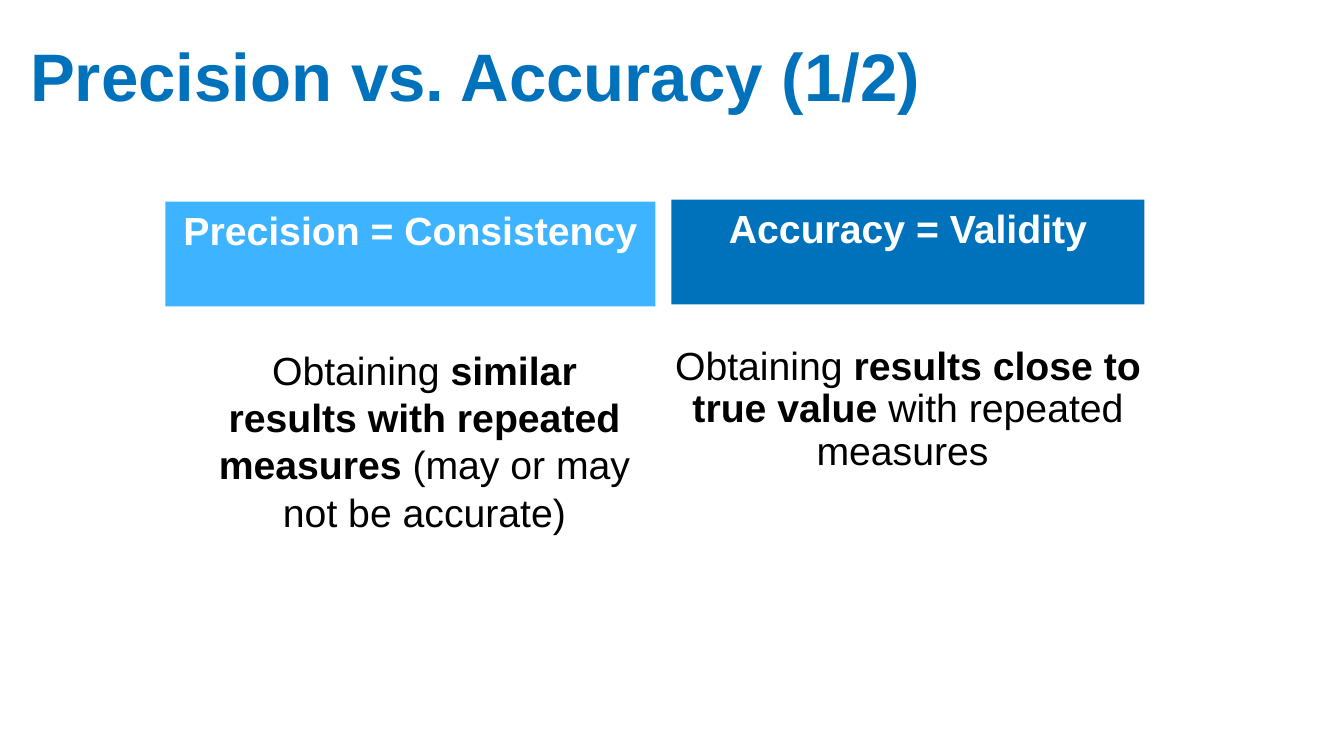
from pptx import Presentation
from pptx.dml.color import RGBColor
from pptx.enum.shapes import MSO_SHAPE
from pptx.enum.text import MSO_ANCHOR, PP_ALIGN
from pptx.util import Inches, Pt

COLOURS = {
    "blue": "0072BC",
    "sky": "3EB3FF",
    "white": "FFFFFF",
    "black": "000000",
}


def colour(name):
    """Return the named colour."""
    return RGBColor.from_string(COLOURS[name])


def write_spans(para, spans, size, colour_name):
    """Add (text, bold) spans to a paragraph."""
    for text, bold in spans:
        span = para.add_run()
        span.text = text
        span.font.name = "Arial"
        span.font.size = Pt(size)
        span.font.bold = bold
        span.font.color.rgb = colour(colour_name)


def set_frame(frame, margins, anchor=MSO_ANCHOR.TOP):
    """Set wrapping, anchor and left, top, right, bottom margins."""
    frame.word_wrap = True
    frame.vertical_anchor = anchor
    frame.margin_left, frame.margin_top, frame.margin_right, frame.margin_bottom = map(Inches, margins)


def add_title(page, text):
    """Add the slide title."""
    box = page.shapes.add_textbox(Inches(0.3), Inches(0.3), Inches(12.77), Inches(0.85))
    set_frame(box.text_frame, (0, 0, 0, 0), MSO_ANCHOR.BOTTOM)
    para = box.text_frame.paragraphs[0]
    para.line_spacing = 0.9
    write_spans(para, [(text, True)], 48, "blue")


def add_header(page, left, top, width, text, fill):
    """Add a filled column header."""
    box = page.shapes.add_shape(MSO_SHAPE.RECTANGLE, Inches(left), Inches(top), Inches(width), Inches(1.04))
    box.shadow.inherit = False
    box.fill.solid()
    box.fill.fore_color.rgb = colour(fill)
    box.line.fill.background()
    set_frame(box.text_frame, (0.1, 0.05, 0.1, 0.05))
    para = box.text_frame.paragraphs[0]
    para.alignment = PP_ALIGN.CENTER
    write_spans(para, [(text, True)], 28, "white")


def add_definition(page, left, width, spans, margins, line_spacing):
    """Add the centred definition under a header."""
    box = page.shapes.add_textbox(Inches(left), Inches(3.39), Inches(width), Inches(3.43))
    set_frame(box.text_frame, margins)
    para = box.text_frame.paragraphs[0]
    para.alignment = PP_ALIGN.CENTER
    para.line_spacing = line_spacing
    write_spans(para, spans, 28, "black")


def main():
    """Build and save the slide."""
    deck = Presentation()
    deck.slide_width, deck.slide_height = Inches(13.33), Inches(7.5)
    page = deck.slides.add_slide(deck.slide_layouts[6])
    add_title(page, "Precision vs. Accuracy (1/2)")
    precision = [
        ("Obtaining ", False),
        ("similar results with repeated measures ", True),
        ("(may or may not be accurate)", False),
    ]
    accuracy = [
        ("Obtaining ", False),
        ("results close to true value ", True),
        ("with repeated measures ", False),
    ]
    add_definition(page, 2.03, 4.36, precision, (0.1, 0.05, 0.1, 0), 1.0)
    add_definition(page, 6.66, 4.69, accuracy, (0, 0.05, 0, 0.05), 0.9)
    add_header(page, 1.64, 2, 4.86, "Precision = Consistency", "sky")
    add_header(page, 6.66, 1.98, 4.69, "Accuracy = Validity", "blue")
    deck.save("out.pptx")


if __name__ == "__main__":
    main()
